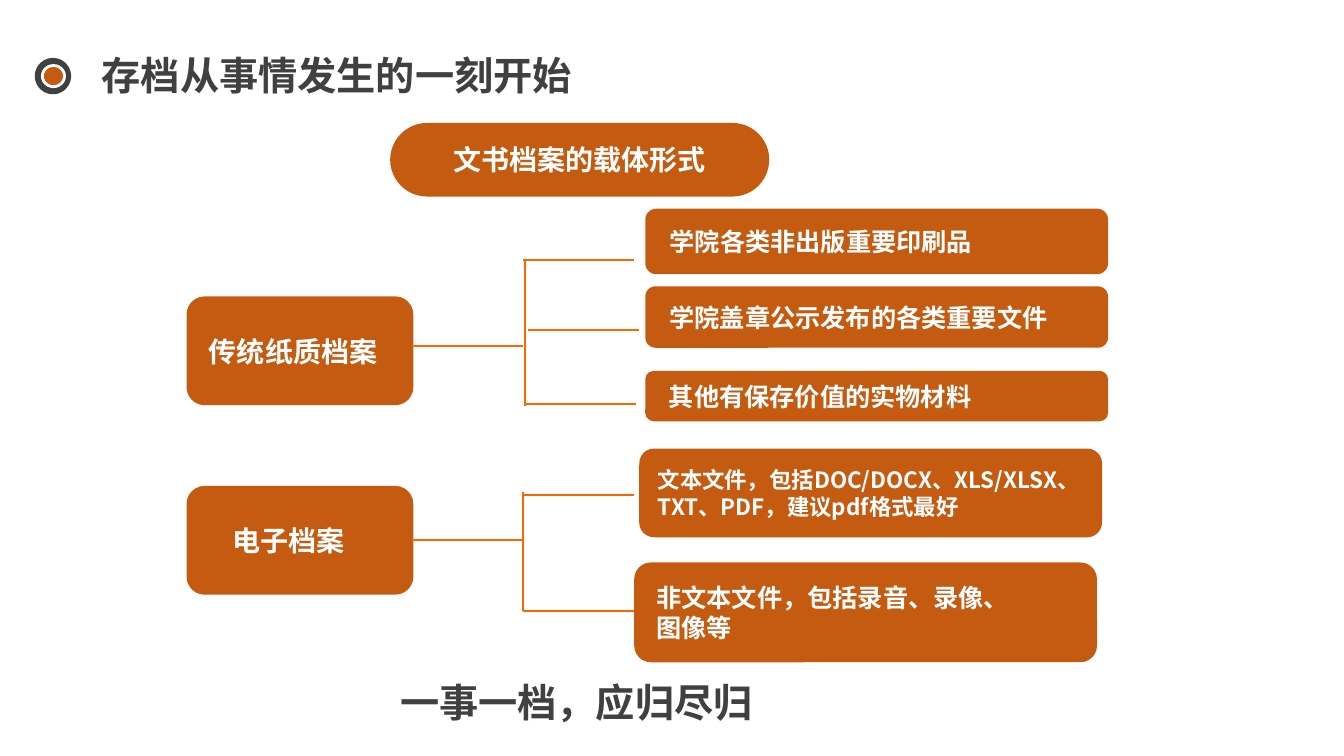
from pptx import Presentation
from pptx.dml.color import RGBColor
from pptx.enum.shapes import MSO_CONNECTOR, MSO_SHAPE
from pptx.enum.text import MSO_ANCHOR, PP_ALIGN
from pptx.oxml.ns import qn
from pptx.util import Pt
from lxml.etree import SubElement

PX = 9144  # EMU in one px, 100 px to the inch
RUST, FLAME, DARK, WHITE = "C55A11", "FF6600", "404040", "FFFFFF"
SANS, ROUND = "Noto Sans CJK SC", "Noto Sans CJK JP"


def emu(*nums):
    return [n * PX for n in nums]


def paint(part, color):
    part.solid()
    part.fore_color.rgb = RGBColor.from_string(color)


def write(shape, text, size, color=WHITE, font=SANS, align=PP_ALIGN.LEFT,
          anchor=MSO_ANCHOR.MIDDLE, pad=(10, 5, 10, 5)):
    frame = shape.text_frame
    frame.text = text
    frame.word_wrap = True
    frame.vertical_anchor = anchor
    (frame.margin_left, frame.margin_top,
     frame.margin_right, frame.margin_bottom) = emu(*pad)
    for para in frame.paragraphs:
        para.alignment = align
        para.line_spacing = 1.0
        para.space_before = Pt(0)
        for run in para.runs:
            run.font.size, run.font.bold, run.font.name = Pt(size), True, font
            paint(run.font.fill, color)
            east = SubElement(run.font._element, qn("a:ea"))
            east.set("typeface", font)


def block(slide, box, kind=MSO_SHAPE.ROUNDED_RECTANGLE, fill=RUST):
    shape = slide.shapes.add_shape(kind, *emu(*box))
    shape.shadow.inherit = False
    paint(shape.fill, fill)
    shape.line.fill.background()
    return shape


def rule(slide, x1, y1, x2, y2):
    line = slide.shapes.add_connector(MSO_CONNECTOR.STRAIGHT, *emu(x1, y1, x2, y2))
    paint(line.line.fill, FLAME)
    line.line.width = Pt(1.5)
    SubElement(line._element.spPr, qn("a:effectLst"))


def header(slide, box):
    """Ring marker with the slide title to its right."""
    left, top, width, height = box
    rings = (((0, 17, 25, 25), DARK, 8), ((2, 19, 22, 21), WHITE, 2))
    for (x, y, w, h), edge, weight in rings:
        dot = block(slide, (left + x, top + y, w, h), MSO_SHAPE.OVAL)
        paint(dot.line.fill, edge)
        dot.line.width = Pt(weight)
    title = slide.shapes.title
    title.left, title.top, title.width, title.height = emu(
        left + 51, top, width - 51, height)
    write(title, "存档从事情发生的一刻开始", 28, DARK, anchor=MSO_ANCHOR.TOP)


def topic(slide, box):
    """Pill that names the theme."""
    pill = block(slide, box)
    pill.adjustments[0] = 0.5
    write(pill, "文书档案的载体形式", 20, font=ROUND, align=PP_ALIGN.CENTER)


def branch(slide, box, name, pad, lead, spine, twigs, cards):
    """Root box, bracket lines and the cards they lead to."""
    left, top, width, height = box
    write(block(slide, box), name, 20, pad=(pad, 5, 0, 5))
    right = left + width
    rule(slide, right - 1, top + lead, right + 109, top + lead)
    x, start, end = spine
    rule(slide, right + x, top + start, right + x, top + end)
    for x, y in twigs:
        rule(slide, right + x, top + y, right + x + 110, top + y)
    for x, y, tall, text, size, inset in cards:
        card = block(slide, (right + x, top + y, 459, tall))
        write(card, text, size, pad=(inset, 5, 10, 5))


def motto(slide, box):
    """Closing line below the tree."""
    note = slide.shapes.add_textbox(*emu(*box))
    write(note, "一事一档，应归尽归", 28, DARK, anchor=MSO_ANCHOR.TOP)


def main():
    deck = Presentation()
    deck.slide_width, deck.slide_height = emu(1333, 750)
    slide = deck.slides.add_slide(deck.slide_layouts[5])
    header(slide, (40, 46, 543, 57))
    topic(slide, (387, 122, 376, 73))
    branch(slide, (185, 294, 225, 108), "传统纸质档案", 17, 49, (111, -36, 109),
           ((109, -36), (114, 33), (111, 107)),
           ((230, -87, 65, "学院各类非出版重要印刷品", 18, 21),
            (230, -10, 61, "学院盖章公示发布的各类重要文件", 18, 21),
            (230, 74, 50, "其他有保存价值的实物材料", 18, 21)))
    branch(slide, (185, 482, 225, 108), "电子档案", 40, 54, (109, 6, 124),
           ((109, 9), (109, 124)),
           ((224, -37, 88, "文本文件，包括DOC/DOCX、XLS/XLSX、TXT、PDF，建议pdf格式最好",
             16, 14),
            (219, 76, 99, "非文本文件，包括录音、录像、\n图像等", 18, 17)))
    motto(slide, (387, 668, 429, 57))
    deck.save("out.pptx")


if __name__ == "__main__":
    main()
